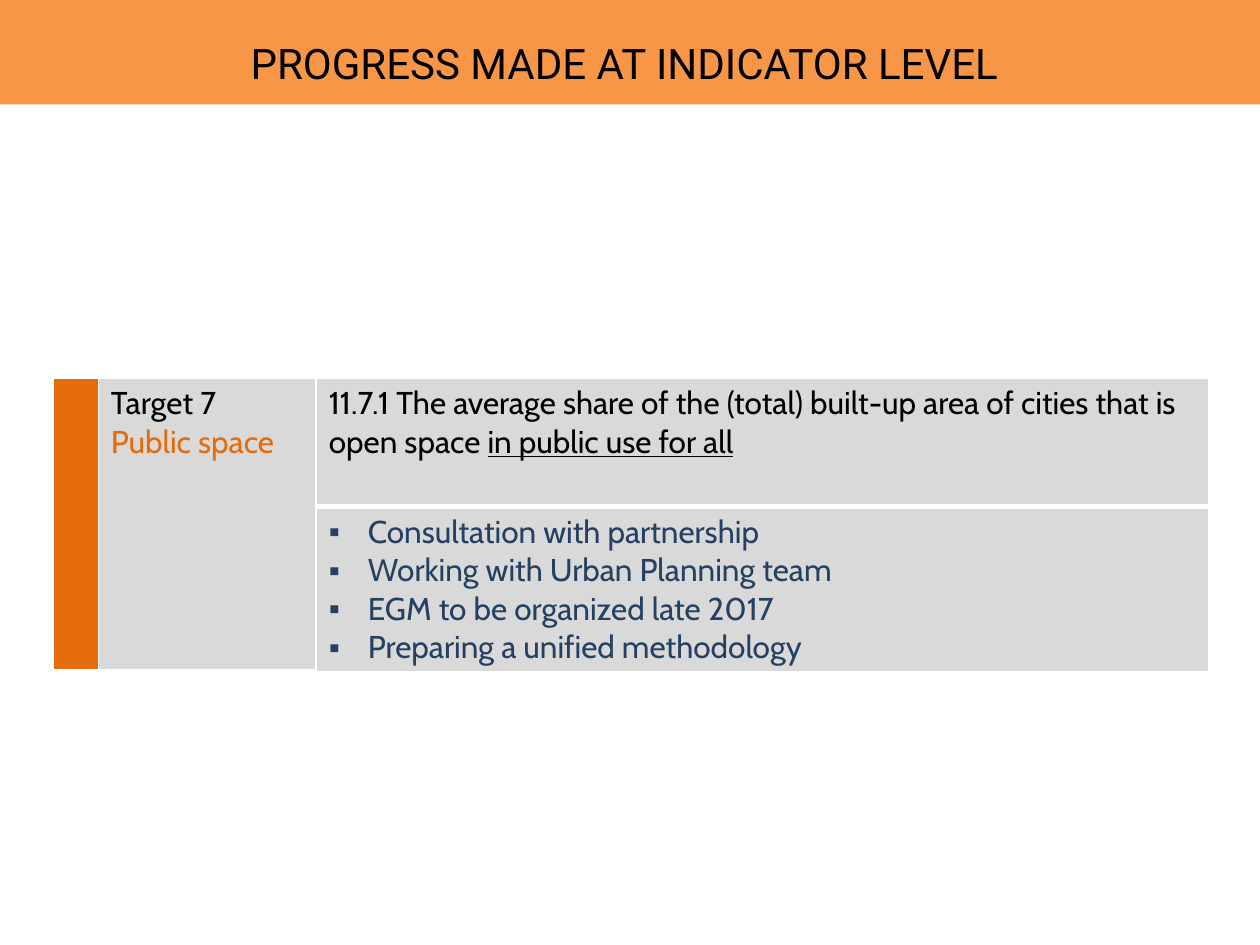
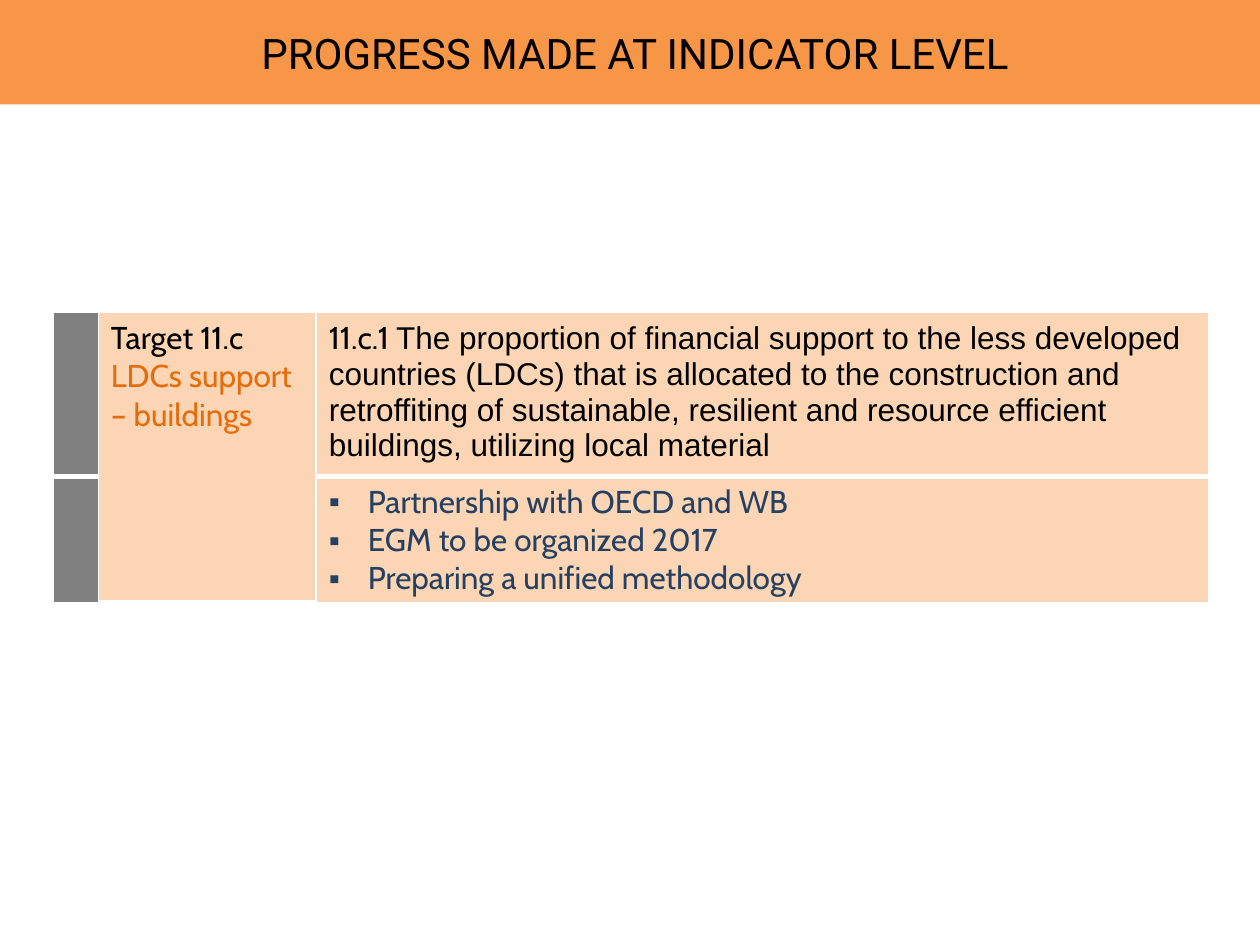
"""Build two slides on the progress made at indicator level."""
import dataclasses

import lxml.etree
import pptx
import pptx.dml.color
import pptx.enum.shapes
import pptx.enum.text
import pptx.oxml.ns
import pptx.util

TITLE = "PROGRESS MADE AT INDICATOR LEVEL"

SLIDES = [
    dict(
        title_box=(0.08, 0.25, 9.75, 0.5),
        top=3.0, rows=(1.02, 1.31),
        side="E46C0A", fill="D9D9D9", joined=(0, 1),
        target="Target 7", topic="Public space",
        goal=[
            ("11.7.1 The average share of the (total) built-up area of cities "
             "that is open space ", {}),
            ("in public use for all", {"line": True}),
        ],
        steps=["Consultation with partnership", "Working with Urban Planning team",
               "EGM to be organized late 2017", "Preparing a unified methodology"],
    ),
    dict(
        title_box=(0.5, 0.17, 9.08, 0.5),
        top=2.48, rows=(1.3, 1.0),
        side="808080", fill="FCD5B5", joined=(1,),
        target="Target 11.c", topic="LDCs support – buildings",
        goal=[
            ("11.c.1 ", {}),
            ("The proportion of financial support to the less developed countries "
             "(LDCs) that is allocated to the construction and retroffiting of "
             "sustainable, resilient and resource efficient buildings, utilizing "
             "local material", {"font": "Arial"}),
        ],
        steps=["Partnership with OECD and WB", "EGM to be organized 2017",
               "Preparing a unified methodology"],
    ),
]


@dataclasses.dataclass(frozen=True)
class Theme:
    band: str = "F79646"
    ink: str = "000000"
    topic: str = "E46C0A"
    step: str = "254061"
    rule: str = "FFFFFF"
    head_font: str = "Roboto"
    font: str = "Cabin"
    head_size: int = 24
    size: int = 18
    thin: int = 1
    thick: int = 3


THEME = Theme()
LEFT = 0.42
COLS = (0.36, 1.73, 7.08)
INDENT = 0.31
Inches = pptx.util.Inches


def rgb(code):
    return pptx.dml.color.RGBColor.from_string(code)


def style(run, color=THEME.ink, font=THEME.font, size=THEME.size, line=False):
    run.font.name = font
    run.font.size = pptx.util.Pt(size)
    run.font.color.rgb = rgb(color)
    if line:
        run.font.underline = True


def add(par, text, **look):
    run = par.add_run()
    run.text = text
    style(run, **look)


def node(parent, tag, **attrs):
    return lxml.etree.SubElement(parent, pptx.oxml.ns.qn(tag), attrs)


def paint(cell, fill, base):
    props = cell._tc.get_or_add_tcPr()
    for side, width in zip("LRTB", (THEME.thin,) * 3 + (base,)):
        edge = node(props, f"a:ln{side}", w=str(pptx.util.Pt(width)))
        node(node(edge, "a:solidFill"), "a:srgbClr", val=THEME.rule)
    cell.fill.solid()
    cell.fill.fore_color.rgb = rgb(fill)


def bullet(par, text):
    par.text = text
    par.alignment = pptx.enum.text.PP_ALIGN.JUSTIFY
    props = par._p.get_or_add_pPr()
    props.set("marL", str(Inches(INDENT)))
    props.set("indent", str(-Inches(INDENT)))
    node(props, "a:buFont", typeface="Arial")
    node(props, "a:buChar", char="▪")
    style(par.runs[0], color=THEME.step)


def header(slide, box):
    band = slide.shapes.add_shape(
        pptx.enum.shapes.MSO_SHAPE.RECTANGLE, 0, 0, Inches(10), Inches(0.83))
    band.shadow.inherit = False
    band.fill.solid()
    band.fill.fore_color.rgb = rgb(THEME.band)
    band.line.fill.background()
    frame = slide.shapes.add_textbox(*map(Inches, box)).text_frame
    frame.word_wrap = True
    frame.text = TITLE
    par = frame.paragraphs[0]
    par.alignment = pptx.enum.text.PP_ALIGN.CENTER
    style(par.runs[0], font=THEME.head_font, size=THEME.head_size)


def grid(slide, data):
    rows = data["rows"]
    table = slide.shapes.add_table(
        len(rows), len(COLS), Inches(LEFT), Inches(data["top"]),
        Inches(sum(COLS)), Inches(sum(rows))).table
    table.first_row = table.horz_banding = False
    for col, width in zip(table.columns, COLS):
        col.width = Inches(width)
    for row, height in zip(table.rows, rows):
        row.height = Inches(height)
    for r in range(len(rows)):
        for c in range(len(COLS)):
            fill = data["side"] if c == 0 else data["fill"]
            thick = r == 0 or c in data["joined"]
            paint(table.cell(r, c), fill, THEME.thick if thick else THEME.thin)
    for c in data["joined"]:
        table.cell(0, c).merge(table.cell(1, c))

    par = table.cell(0, 1).text_frame.paragraphs[0]
    add(par, data["target"])
    par.add_line_break()
    add(par, data["topic"], color=THEME.topic)
    par = table.cell(0, 2).text_frame.paragraphs[0]
    for text, look in data["goal"]:
        add(par, text, **look)
    frame = table.cell(1, 2).text_frame
    for i, text in enumerate(data["steps"]):
        bullet(frame.add_paragraph() if i else frame.paragraphs[0], text)


def main():
    deck = pptx.Presentation()
    deck.slide_width, deck.slide_height = Inches(10), Inches(7.5)
    for data in SLIDES:
        slide = deck.slides.add_slide(deck.slide_layouts[6])
        header(slide, data["title_box"])
        grid(slide, data)
    deck.save("out.pptx")


if __name__ == "__main__":
    main()
